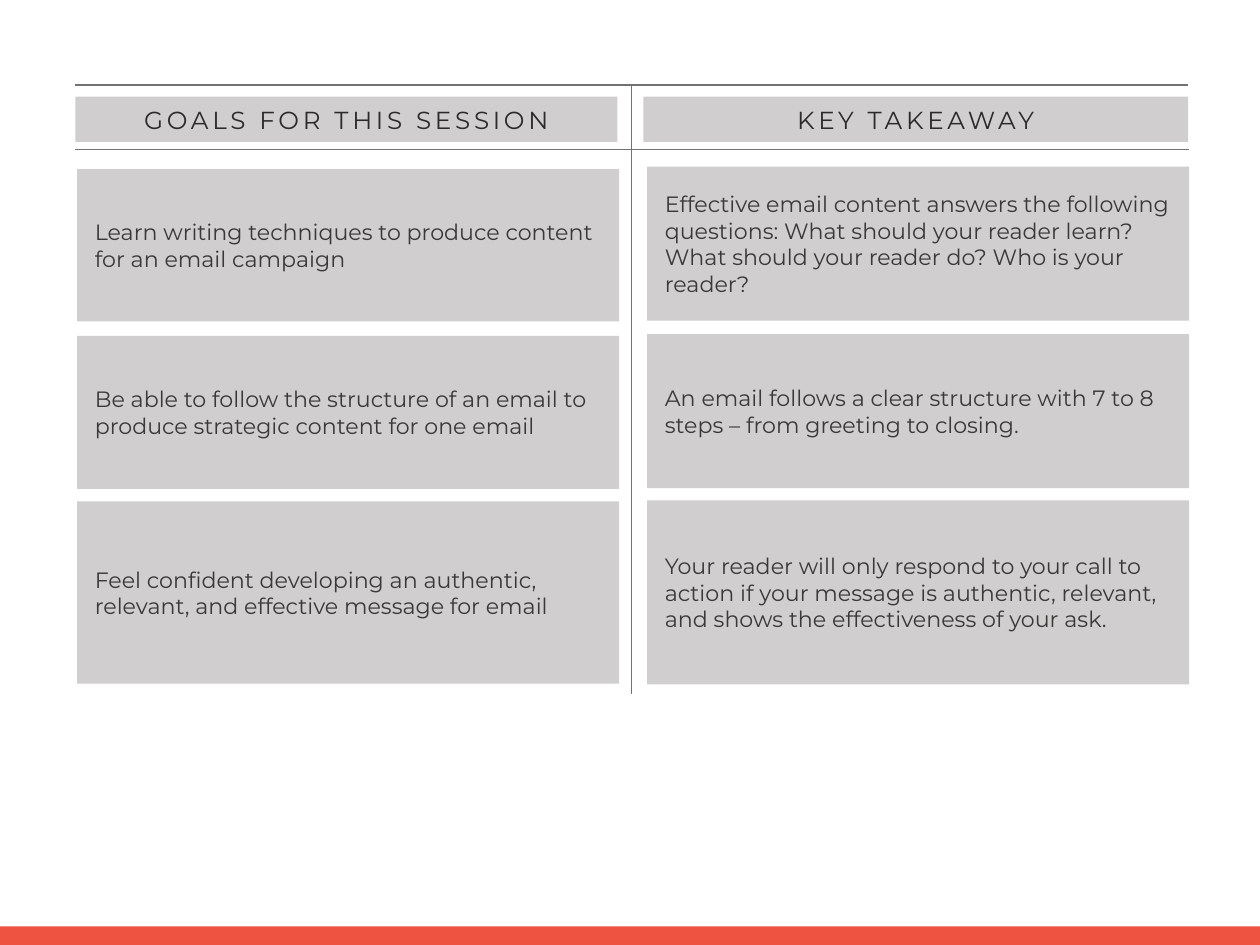
from dataclasses import dataclass

from lxml import etree
from pptx import Presentation
from pptx.dml.color import RGBColor
from pptx.enum.shapes import MSO_CONNECTOR, MSO_SHAPE
from pptx.enum.text import MSO_ANCHOR, MSO_AUTO_SIZE, PP_ALIGN
from pptx.oxml.ns import qn
from pptx.util import Cm, Pt

RECT = MSO_SHAPE.RECTANGLE
STRAIGHT = MSO_CONNECTOR.STRAIGHT
MIDDLE = MSO_ANCHOR.MIDDLE
NO_FIT = MSO_AUTO_SIZE.NONE
LEFT, CENTER = PP_ALIGN.LEFT, PP_ALIGN.CENTER
COMPARISON = 4  # layout with two column headings

WIDTH, HEIGHT = 36.12, 27.1


@dataclass(frozen=True)
class Theme:
    font: str = "Montserrat"
    head_size: int = 20
    body_size: int = 18
    spacing: int = 3
    rule_width: int = 1
    panel: RGBColor = RGBColor(0xD0, 0xCE, 0xCE)
    accent: RGBColor = RGBColor(0xED, 0x53, 0x40)
    rule: RGBColor = RGBColor(0x76, 0x71, 0x71)
    head: RGBColor = RGBColor(0x2C, 0x2A, 0x2A)
    body: RGBColor = RGBColor(0x3B, 0x38, 0x38)


THEME = Theme()

# Placeholder index, box, text
HEADS = [
    (1, (2.16, 2.77, 15.54, 1.3), "GOALS FOR THIS SESSION"),
    (3, (18.44, 2.77, 15.62, 1.3), "KEY TAKEAWAY"),
]

# Column left edge, then top, height and text of each card
COLUMNS = [
    (2.21, [
        (4.85, 4.37, "Learn writing techniques to produce content "
                     "for an email campaign"),
        (9.63, 4.39, "Be able to follow the structure of an email to "
                     "produce strategic content for one email"),
        (14.38, 5.23, "Feel confident developing an authentic, "
                      "relevant, and effective message for email"),
    ]),
    (18.55, [
        (4.78, 4.42, "Effective email content answers the following "
                     "questions: What should your reader learn? What should "
                     "your reader do? Who is your reader?"),
        (9.58, 4.42, "An email follows a clear structure with 7 to 8 "
                     "steps – from greeting to closing."),
        (14.35, 5.28, "Your reader will only respond to your call to "
                      "action if your message is authentic, relevant, "
                      "and shows the effectiveness of your ask."),
    ]),
]
CARD_WIDTH = 15.54

RULES = [
    (2.16, 2.44, 34.06, 2.44),
    (2.16, 4.29, 34.09, 4.29),
    (18.11, 2.44, 18.11, 19.89),
]


def paint(shape, color):
    shape.fill.solid()
    shape.fill.fore_color.rgb = color
    shape.line.fill.background()


def add_box(slide, box, color):
    shape = slide.shapes.add_shape(RECT, *map(Cm, box))
    shape.shadow.inherit = False
    paint(shape, color)
    return shape


def write(shape, text, size, color, align):
    frame = shape.text_frame
    frame.text = text
    frame.word_wrap = True
    frame.auto_size = NO_FIT
    frame.vertical_anchor = MIDDLE
    para = frame.paragraphs[0]
    para.alignment = align
    para.space_before = Pt(0)
    para.font.name = THEME.font
    para.font.size = Pt(size)
    para.font.bold = False
    para.font.color.rgb = color
    return frame


def add_head(slide, index, box, text):
    """Turn a heading placeholder into a filled, letter-spaced band."""
    head = slide.placeholders[index]
    head.left, head.top, head.width, head.height = map(Cm, box)
    paint(head, THEME.panel)
    frame = write(head, text, THEME.head_size, THEME.head, CENTER)
    run = frame.paragraphs[0].runs[0]
    run._r.get_or_add_rPr().set("spc", str(THEME.spacing * 100))


def add_card(slide, box, text):
    card = add_box(slide, box, THEME.panel)
    frame = write(card, text, THEME.body_size, THEME.body, LEFT)
    frame.margin_left = frame.margin_right = Cm(0.51)
    frame.margin_top = frame.margin_bottom = Cm(0.25)


def add_rule(slide, ends):
    rule = slide.shapes.add_connector(STRAIGHT, *map(Cm, ends))
    rule.line.color.rgb = THEME.rule
    rule.line.width = Pt(THEME.rule_width)
    etree.SubElement(rule._element.spPr, qn("a:effectLst"))


def drop_empty(slide):
    """Remove the placeholders that hold no text."""
    for holder in list(slide.placeholders):
        if not holder.text_frame.text:
            holder._element.getparent().remove(holder._element)


def main():
    deck = Presentation()
    deck.slide_width, deck.slide_height = Cm(WIDTH), Cm(HEIGHT)
    slide = deck.slides.add_slide(deck.slide_layouts[COMPARISON])

    add_box(slide, (0, 26.57, WIDTH, HEIGHT - 26.57), THEME.accent)
    for index, box, text in HEADS:
        add_head(slide, index, box, text)
    for left, cards in COLUMNS:
        for top, height, text in cards:
            add_card(slide, (left, top, CARD_WIDTH, height), text)
    for ends in RULES:
        add_rule(slide, ends)
    drop_empty(slide)

    deck.save("out.pptx")


if __name__ == "__main__":
    main()
